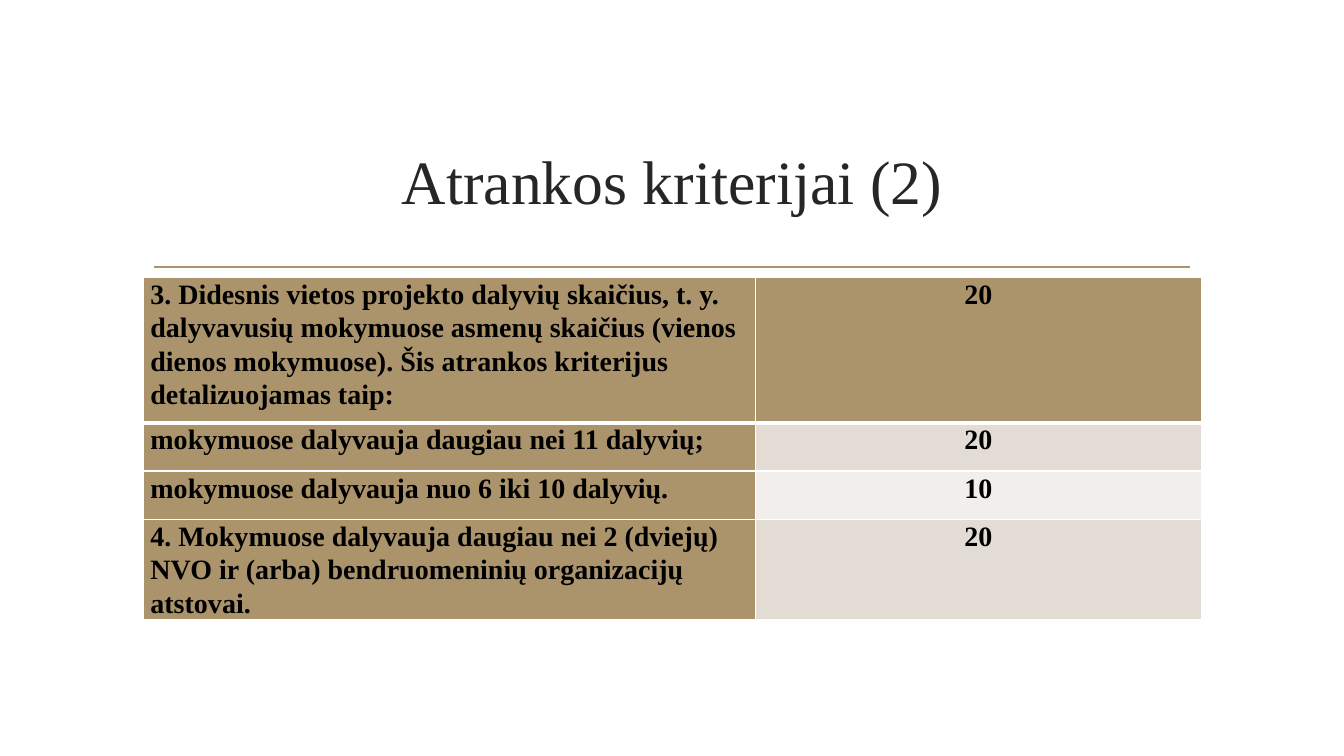
from lxml.etree import SubElement
from pptx import Presentation
from pptx.dml.color import RGBColor
from pptx.enum.shapes import MSO_CONNECTOR
from pptx.enum.text import MSO_ANCHOR, PP_ALIGN
from pptx.oxml.ns import qn
from pptx.util import Cm, Pt

COLORS = {
    "tan": "AB946B",
    "band": "E2DCD4",
    "light_band": "F1EEEB",
    "border": "FFFFFF",
    "title": "262626",
    "text": "000000",
}

CRITERIA = [
    ("3. Didesnis vietos projekto dalyvių skaičius, t. y. dalyvavusių mokymuose asmenų "
     "skaičius (vienos dienos mokymuose). Šis atrankos kriterijus detalizuojamas taip:", "20"),
    ("mokymuose dalyvauja daugiau nei 11 dalyvių;", "20"),
    ("mokymuose dalyvauja nuo 6 iki 10 dalyvių.", "10"),
    ("4. Mokymuose dalyvauja daugiau nei 2 (dviejų) NVO ir (arba) bendruomeninių "
     "organizacijų atstovai.", "20"),
]
SCORE_FILLS = ["tan", "band", "light_band", "band"]


class SlideBuilder:
    font_name = "Times New Roman"

    def __init__(self, slide):
        self.slide = slide

    def color(self, name):
        return RGBColor.from_string(COLORS[name])

    def format_text(self, paragraph, size, color, alignment, bold=False):
        paragraph.alignment = alignment
        for run in paragraph.runs:
            run.font.name = self.font_name
            run.font.size = Pt(size)
            run.font.bold = bold
            run.font.color.rgb = self.color(color)

    def add_rule(self, left, right, top):
        rule = self.slide.shapes.add_connector(
            MSO_CONNECTOR.STRAIGHT, Cm(left), Cm(top), Cm(right), Cm(top))
        rule.line.color.rgb = self.color("tan")
        rule.line.width = Pt(1.25)
        SubElement(rule._element.spPr, qn("a:effectLst"))

    def add_title(self, text, left, top, width, height):
        title = self.slide.shapes.title
        title.left, title.top, title.width, title.height = map(Cm, (left, top, width, height))
        title.text_frame.text = text
        title.text_frame.vertical_anchor = MSO_ANCHOR.MIDDLE
        self.format_text(title.text_frame.paragraphs[0], 44, "title", PP_ALIGN.CENTER)

    def add_border(self, cell, side, width):
        line = SubElement(cell._tc.get_or_add_tcPr(), qn(f"a:ln{side}"), w=str(Pt(width)))
        fill = SubElement(line, qn("a:solidFill"))
        SubElement(fill, qn("a:srgbClr"), val=COLORS["border"])

    def format_cell(self, cell, text, fill, alignment, top_border, bottom_border):
        for side, width in zip("LRTB", (1, 1, top_border, bottom_border)):
            self.add_border(cell, side, width)
        cell.fill.solid()
        cell.fill.fore_color.rgb = self.color(fill)
        cell.margin_left = cell.margin_right = Cm(0.18)
        cell.margin_top = cell.margin_bottom = 0
        cell.text_frame.text = text
        paragraph = cell.text_frame.paragraphs[0]
        paragraph.line_spacing = 1.07
        self.format_text(paragraph, 20, "text", alignment, bold=True)

    def add_criteria_table(self, left, top, column_widths, row_heights):
        table = self.slide.shapes.add_table(
            len(row_heights), len(column_widths), Cm(left), Cm(top),
            Cm(sum(column_widths)), Cm(sum(row_heights))).table
        table.horz_banding = False
        for column, width in zip(table.columns, column_widths):
            column.width = Cm(width)
        for index, (criterion, score) in enumerate(CRITERIA):
            table.rows[index].height = Cm(row_heights[index])
            top_border = 3 if index == 1 else 1
            bottom_border = 3 if index == 0 else 1
            self.format_cell(table.cell(index, 0), criterion, "tan",
                             PP_ALIGN.LEFT, top_border, bottom_border)
            self.format_cell(table.cell(index, 1), score, SCORE_FILLS[index],
                             PP_ALIGN.CENTER, top_border, bottom_border)


def main():
    presentation = Presentation()
    presentation.slide_width = Cm(33.87)
    presentation.slide_height = Cm(19.05)
    slide = presentation.slides.add_slide(presentation.slide_layouts[5])
    builder = SlideBuilder(slide)
    builder.add_rule(3.89, 30, 6.73)
    builder.add_title("Atrankos kriterijai (2)", 3.61, 2.72, 26.67, 3.63)
    builder.add_criteria_table(3.61, 6.99, [15.42, 11.25], [3.66, 1.22, 1.22, 2.44])
    presentation.save("out.pptx")


if __name__ == "__main__":
    main()
